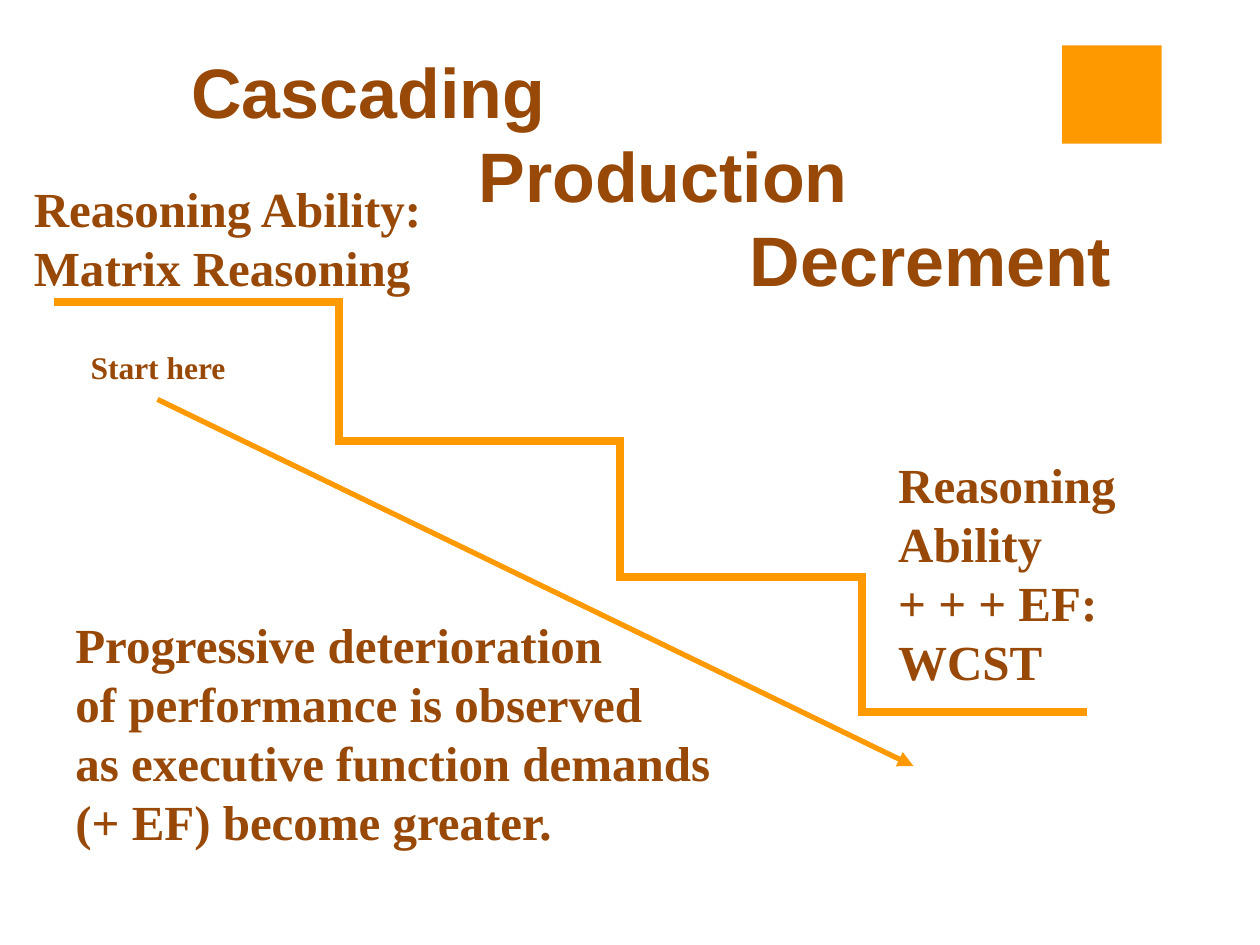
from itertools import pairwise

from lxml import etree
from pptx import Presentation, util as u
from pptx.dml.color import RGBColor
from pptx.enum import shapes, text
from pptx.oxml.ns import qn

THEME = {
    "brown": RGBColor.from_string("984807"),
    "orange": RGBColor.from_string("FF9900"),
    "title": {"name": "Arial", "size": u.Pt(40), "bold": True},
    "label": {"name": "Times New Roman", "size": u.Pt(28), "bold": True},
    "small": {"name": "Times New Roman", "size": u.Pt(18), "bold": True},
    "stair": u.Pt(4.5),
    "arrow": u.Pt(3),
}
LEADING = 1.2

deck = Presentation()
deck.slide_width, deck.slide_height = u.Inches(10), u.Inches(7.5)
UNIT = deck.slide_width / 10  # the page is a grid of 10 columns by 7.5 rows
page = deck.slides.add_slide(deck.slide_layouts[5])


def grid(*cells):
    return [round(cell * UNIT) for cell in cells]


def write(box, lines, style):
    """Fill a box with one left-aligned paragraph per line."""
    frame = box.text_frame
    frame.text = "\n".join(lines)
    for para in frame.paragraphs:
        para.alignment = text.PP_ALIGN.LEFT
        para.line_spacing = u.Pt(THEME[style]["size"].pt * LEADING)
        for span in para.runs:
            for key, value in THEME[style].items():
                setattr(span.font, key, value)
            span.font.color.rgb = THEME["brown"]


# Title, each word indented further than the one above
title = page.shapes.title
title.left, title.top, title.width, title.height = grid(1.42, 0.76, 8.5, 1.25)
title.text_frame.vertical_anchor = text.MSO_ANCHOR.MIDDLE
title.text_frame.auto_size = text.MSO_AUTO_SIZE.NONE
write(title, ["Cascading", "Production", "Decrement"], "title")
for para, indent in zip(title.text_frame.paragraphs, grid(0, 2.28, 4.43)):
    properties = para._p.get_or_add_pPr()
    properties.set("marL", str(indent))
    properties.set("indent", "0")

# Staircase: treads overlap the risers by half a line width
stair_x = [0.43, 2.69, 4.92, 6.84, 8.63]
stair_y = [2.4, 3.5, 4.58, 5.65]
overlap = 0.03
last = len(stair_y) - 1
treads = [
    (left - overlap * (step > 0), y, right + overlap * (step < last), y)
    for step, ((left, right), y) in enumerate(zip(pairwise(stair_x), stair_y))
]
risers = [(x, top, x, bottom)
          for x, (top, bottom) in zip(stair_x[1:], pairwise(stair_y))]
staircase = page.shapes.add_group_shape()
strokes = [(staircase.shapes, ends, "stair") for ends in treads + risers]
strokes.append((page.shapes, (1.25, 3.17, 7.25, 6.08), "arrow"))
for parent, ends, weight in strokes:
    stroke = parent.add_connector(shapes.MSO_CONNECTOR.STRAIGHT, *grid(*ends))
    stroke.line.color.rgb = THEME["orange"]
    stroke.line.width = THEME[weight]
    etree.SubElement(stroke._element.spPr, qn("a:effectLst"))
    if weight == "arrow":
        etree.SubElement(stroke.line._get_or_add_ln(), qn("a:tailEnd"), type="triangle")

# Labels around the staircase
labels = [
    ((0.17, 1.37, 3.31, 1.04), "label", False,
     ["Reasoning Ability:", "Matrix Reasoning"]),
    ((7.03, 3.56, 1.95, 1.99), "label", False,
     ["Reasoning", "Ability", "+ + + EF:", "WCST"]),
    ((0.5, 4.83, 5.42, 1.97), "label", True,
     ["Progressive deterioration", "of performance is observed",
      "as executive function demands (+ EF) become greater."]),
    ((0.62, 2.71, 1.28, 0.4), "small", False, ["Start here"]),
]
for place, style, wrap, lines in labels:
    box = page.shapes.add_textbox(*grid(*place))
    box.text_frame.word_wrap = wrap
    write(box, lines, style)

# Corner square
square = page.shapes.add_shape(shapes.MSO_SHAPE.RECTANGLE, *grid(8.43, 0.36, 0.79, 0.78))
square.shadow.inherit = False
square.fill.solid()
square.fill.fore_color.rgb = THEME["orange"]
square.line.fill.background()

deck.save("out.pptx")
